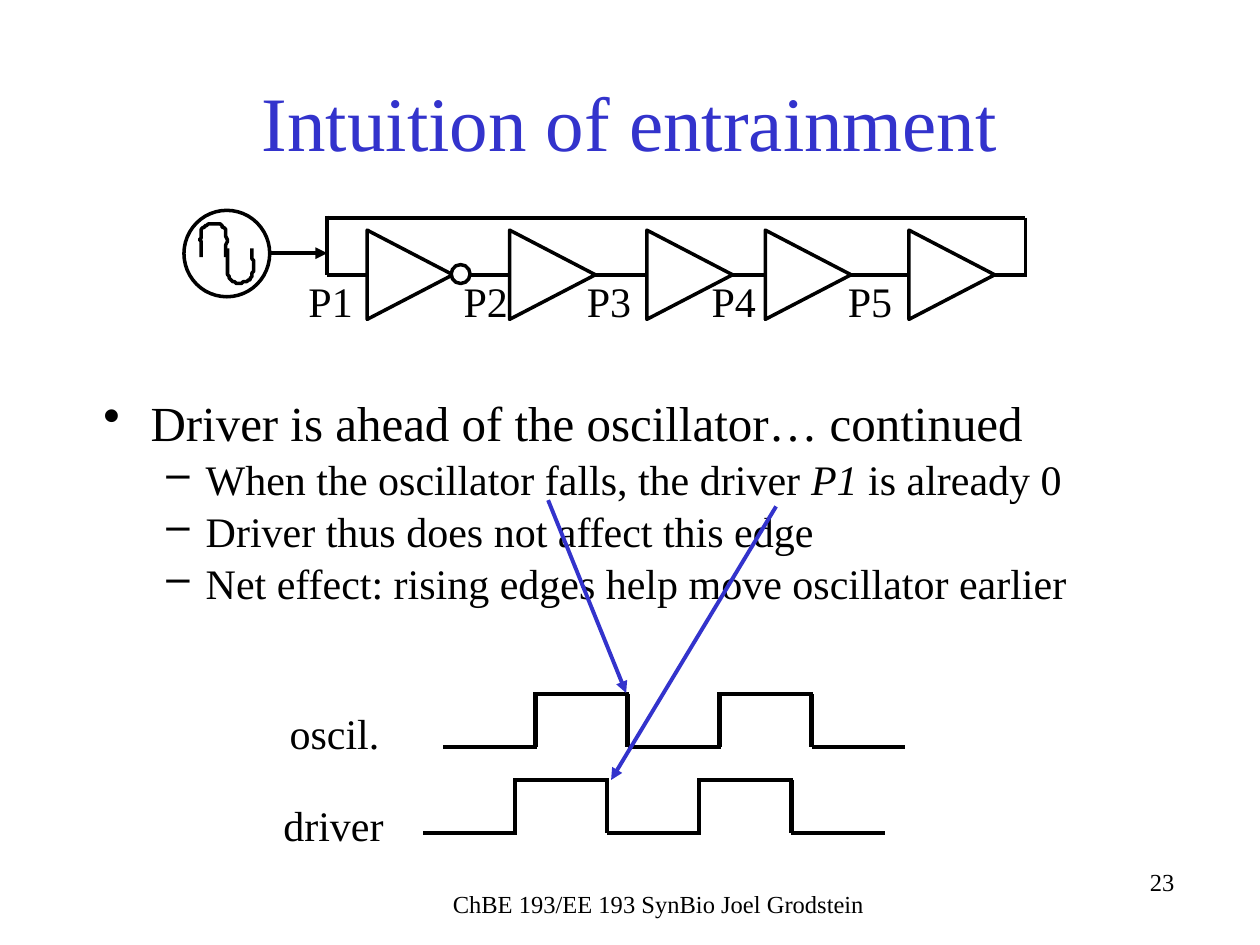
from dataclasses import dataclass

from pptx import Presentation
from pptx.dml.color import RGBColor
from pptx.enum.shapes import MSO_CONNECTOR, MSO_SHAPE
from pptx.enum.text import MSO_ANCHOR, PP_ALIGN
from pptx.oxml.ns import qn
from pptx.util import Pt

STRAIGHT = MSO_CONNECTOR.STRAIGHT
OVAL, TRIANGLE = MSO_SHAPE.OVAL, MSO_SHAPE.FLOWCHART_MERGE
LEFT, CENTER, RIGHT = PP_ALIGN.LEFT, PP_ALIGN.CENTER, PP_ALIGN.RIGHT
TOP, MIDDLE = MSO_ANCHOR.TOP, MSO_ANCHOR.MIDDLE


@dataclass(frozen=True)
class Theme:
    font: str = "Times New Roman"
    ink: RGBColor = RGBColor(0, 0, 0)
    accent: RGBColor = RGBColor(0x33, 0x33, 0xCC)
    paper: RGBColor = RGBColor(255, 255, 255)
    title: int = 44
    body: int = 28
    label: int = 24
    footer: int = 14
    outline: float = 2
    wire: float = 2.25
    pulse: float = 2.5


def add_run(p, text, *, theme, size, color=None, italic=False):
    r = p.add_run()
    r.text = text
    r.font.name = theme.font
    r.font.size = Pt(size)
    r.font.color.rgb = color or theme.ink
    r.font.italic = italic


def bezier(p0, p1, p2, p3, steps=12):
    """Points along a cubic curve, without its first point."""
    for i in range(1, steps + 1):
        t = i / steps
        u = 1 - t
        yield tuple(u**3 * a + 3 * u * u * t * b + 3 * u * t * t * c + t**3 * d
                    for a, b, c, d in zip(p0, p1, p2, p3))


class SlideWriter:
    def __init__(self, slide, theme):
        self.s = slide
        self.theme = theme

    def frame(self, x, y, w, h, anchor=TOP, wrap=True):
        tf = self.s.shapes.add_textbox(Pt(x), Pt(y), Pt(w), Pt(h)).text_frame
        tf.word_wrap = wrap
        tf.vertical_anchor = anchor
        return tf

    def text(self, text, x, y, w, h, size, align=LEFT, anchor=TOP, color=None):
        p = self.frame(x, y, w, h, anchor).paragraphs[0]
        p.alignment = align
        add_run(p, text, theme=self.theme, size=size, color=color)

    def bullets(self, items, x, y, w, h):
        """Items are (level, runs), each run being (text, italic)."""
        styles = [("•", 27, 27, self.theme.body, 4),
                  ("–", 58.5, 22.5, self.theme.label, 1)]
        tf = self.frame(x, y, w, h)
        for i, (level, runs) in enumerate(items):
            mark, margin, hang, size, before = styles[level]
            p = tf.add_paragraph() if i else tf.paragraphs[0]
            p.level = level
            p.space_before = Pt(before)
            pPr = p._p.get_or_add_pPr()
            pPr.set("marL", str(Pt(margin)))
            pPr.set("indent", str(-Pt(hang)))
            bu = pPr.makeelement(qn("a:buChar"), {"char": mark})
            pPr.append(bu)
            for text, italic in runs:
                add_run(p, text, theme=self.theme, size=size, italic=italic)

    def line(self, x1, y1, x2, y2, width, color=None, arrow=False):
        c = self.s.shapes.add_connector(STRAIGHT, Pt(x1), Pt(y1), Pt(x2), Pt(y2))
        c.line.width = Pt(width)
        c.line.color.rgb = color or self.theme.ink
        if arrow:
            ln = c.line._get_or_add_ln()
            ln.append(ln.makeelement(qn("a:tailEnd"), {"type": "triangle"}))
        spPr = c._element.spPr
        spPr.append(spPr.makeelement(qn("a:effectLst"), {}))

    def outline(self, sp):
        sp.shadow.inherit = False
        sp.line.color.rgb = self.theme.ink
        sp.line.width = Pt(self.theme.outline)

    def shape(self, kind, x, y, w, h, rotation=0):
        sp = self.s.shapes.add_shape(kind, Pt(x), Pt(y), Pt(w), Pt(h))
        sp.rotation = rotation
        sp.fill.solid()
        sp.fill.fore_color.rgb = self.theme.paper
        self.outline(sp)

    def curve(self, points):
        """Open outline through cubic segments: a start, then three points each."""
        path = [points[0]]
        for i in range(0, len(points) - 1, 3):
            path.extend(bezier(*points[i:i + 4]))
        fb = self.s.shapes.build_freeform(*path[0], scale=Pt(1))
        fb.add_line_segments(path[1:], close=False)
        sp = fb.convert_to_shape()
        sp.fill.background()
        self.outline(sp)

    def pulses(self, x, high, low, half=52.6, count=5):
        """Square wave that starts low, with a small overlap at its corners."""
        for i in range(count):
            left = x + i * half
            y = high if i % 2 else low
            start = left - 1.2 if i % 2 else left
            self.line(start, y, left + half + 1, y, self.theme.pulse)
            if i:
                self.line(left, high, left, low, self.theme.pulse)


def draw_ring(w, theme):
    left, right, top, mid = 187, 586, 124.5, 157
    driver_y = 144.7
    for wire in [(left, mid, right + 1, mid), (right, top, right, mid + 1),
                 (left, top - 1.2, left, mid), (left, top, right, top)]:
        w.line(*wire, theme.wire)
    w.line(105, driver_y, left, driver_y, theme.wire, arrow=True)

    for x in (208.8, 290.2, 368.6, 436.3, 518.4):
        w.shape(TRIANGLE, x, 132.5, 51, 49, rotation=270)
    w.shape(OVAL, 257.8, 151.2, 10.8, 10.8)
    for i, x in enumerate((169.2, 257.8, 328.3, 399.6, 477.4), 1):
        w.text(f"P{i}", x, 154.1, 41, 36, theme.label)

    w.shape(OVAL, 105.1, 120.2, 49, 49.4)
    crest = [(115.2, 146.9), (114.5, 139.7), (113.8, 133.2), (115.9, 130.3),
             (118.1, 127.4), (125.3, 126.7), (127.4, 129.6),
             (130.3, 132.5), (129.6, 139.7), (128.9, 146.9)]
    w.curve(crest)
    # The trough is the crest turned half a turn about the circle's centre.
    w.curve([(259.2 - x, 289.4 - y) for x, y in reversed(crest)])


def main():
    prs = Presentation()
    prs.slide_width, prs.slide_height = Pt(720), Pt(540)
    theme = Theme()
    w = SlideWriter(prs.slides.add_slide(prs.slide_layouts[6]), theme)

    w.text("23", 450, 491.8, 228.2, 36, theme.footer, RIGHT)
    w.text("Intuition of entrainment", 54, 24, 612, 90, theme.title,
           CENTER, MIDDLE, theme.accent)
    w.bullets([
        (0, [("Driver is ahead of the oscillator… continued", False)]),
        (1, [("When the oscillator falls, the driver ", False), ("P1", True),
             (" is already 0", False)]),
        (1, [("Driver thus does not affect this edge", False)]),
        (1, [("Net effect: rising edges help move oscillator earlier", False)]),
    ], 52, 221, 643, 122.4)
    w.text("ChBE 193/EE 193 SynBio Joel Grodstein", 246, 504.7, 260.6, 23,
           theme.footer, CENTER)

    w.text("oscil.", 158.4, 401, 71.3, 36, theme.label)
    w.pulses(253.4, 396.7, 427)
    w.text("driver", 154.8, 453.6, 81.4, 36, theme.label)
    w.pulses(241.8, 445.7, 476)
    for arrow in [(313.2, 285.8, 357.8, 396), (443.5, 289.4, 349.2, 445.7)]:
        w.line(*arrow, theme.wire, theme.accent, arrow=True)

    draw_ring(w, theme)
    prs.save("out.pptx")


if __name__ == "__main__":
    main()
